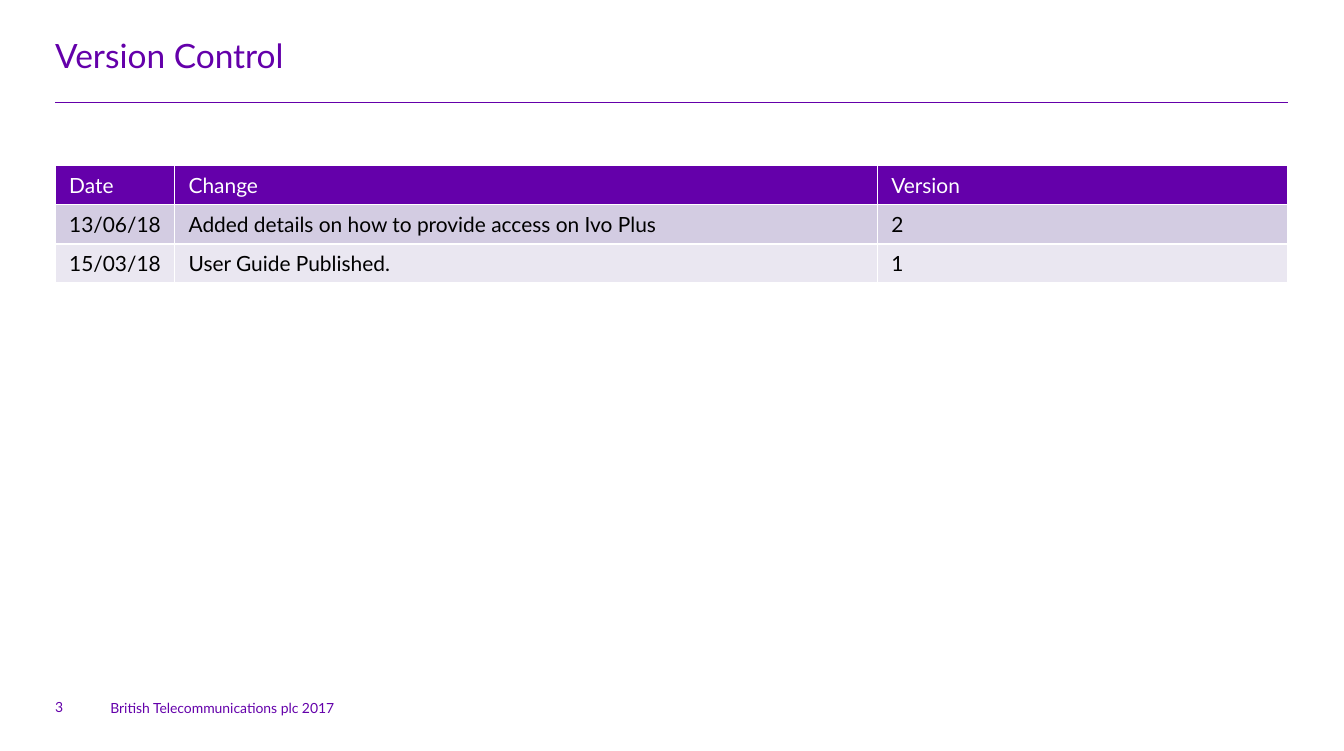
from lxml.etree import SubElement
from pptx import Presentation
from pptx.dml.color import RGBColor
from pptx.enum.shapes import MSO_CONNECTOR
from pptx.enum.text import MSO_ANCHOR
from pptx.oxml.ns import qn
from pptx.util import Inches, Pt

# Content
TITLE = "Version Control"
FOOTER = "British Telecommunications plc 2017"
PAGE_NUMBER = "3"
VERSIONS = [
    ("Date", "Change", "Version"),
    ("13/06/18", "Added details on how to provide access on Ivo Plus", "2"),
    ("15/03/18", "User Guide Published.", "1"),
]

# Format
FONT = "Lato"
PURPLE = RGBColor(0x64, 0x00, 0xAA)
LILAC = RGBColor(0xD3, 0xCC, 0xE2)
PALE_LILAC = RGBColor(0xEA, 0xE7, 0xF1)
WHITE = RGBColor(0xFF, 0xFF, 0xFF)
BLACK = RGBColor(0x00, 0x00, 0x00)
ROW_STYLES = [(PURPLE, WHITE), (LILAC, BLACK), (PALE_LILAC, BLACK)]

# Layout in inches; the narrow right margin keeps each date on one line
LEFT, WIDTH = 0.55, 12.28
COLUMN_WIDTHS = [1.19, 7, 4.09]
ROW_HEIGHT = 0.38
CELL_MARGINS = {
    "margin_left": Inches(0.14), "margin_right": Inches(0.05),
    "margin_top": Inches(0.07), "margin_bottom": Inches(0.07),
}
TEXT_BOXES = [
    (TITLE, (LEFT, 0.35, WIDTH, 0.47), 24, MSO_ANCHOR.TOP),
    (PAGE_NUMBER, (LEFT, 6.81, 0.39, 0.31), 10, MSO_ANCHOR.BOTTOM),
    (FOOTER, (1.1, 6.84, 2.36, 0.29), 10, MSO_ANCHOR.BOTTOM),
]


def set_attributes(target, values):
    for name, value in values.items():
        setattr(target, name, value)


def write(frame, text, size, color):
    span = frame.paragraphs[0].add_run()
    span.text = text
    set_attributes(span.font, {"name": FONT, "size": Pt(size), "bold": False})
    span.font.color.rgb = color


def add_text(page, text, place, size, anchor):
    frame = page.shapes.add_textbox(*map(Inches, place)).text_frame
    set_attributes(frame, {
        "word_wrap": True, "vertical_anchor": anchor, "margin_left": 0,
        "margin_top": 0, "margin_right": 0, "margin_bottom": 0,
    })
    write(frame, text, size, PURPLE)


def add_borders(cell):
    properties = cell._tc.get_or_add_tcPr()
    for side in "LRTB":
        line = SubElement(properties, qn(f"a:ln{side}"), w=str(Pt(1)))
        fill = SubElement(line, qn("a:solidFill"))
        SubElement(fill, qn("a:srgbClr"), val=str(WHITE))


def add_version_table(page):
    table = page.shapes.add_table(
        len(VERSIONS), len(COLUMN_WIDTHS), Inches(LEFT), Inches(1.65),
        Inches(WIDTH), Inches(ROW_HEIGHT * len(VERSIONS))).table
    for column, width in zip(table.columns, COLUMN_WIDTHS):
        column.width = Inches(width)
    for row, texts, colors in zip(table.rows, VERSIONS, ROW_STYLES):
        row.height = Inches(ROW_HEIGHT)
        fill_color, text_color = colors
        for cell, text in zip(row.cells, texts):
            set_attributes(cell, CELL_MARGINS)
            add_borders(cell)
            cell.fill.solid()
            cell.fill.fore_color.rgb = fill_color
            write(cell.text_frame, text, 15, text_color)


def main():
    deck = Presentation()
    set_attributes(deck, {"slide_width": Inches(13.39),
                          "slide_height": Inches(7.48)})
    page = deck.slides.add_slide(deck.slide_layouts[6])

    # Rule under the title
    rule = page.shapes.add_connector(
        MSO_CONNECTOR.STRAIGHT, Inches(LEFT), Inches(1.02),
        Inches(LEFT + WIDTH), Inches(1.02))
    rule.line.width = Pt(0.25)
    rule.line.color.rgb = PURPLE
    SubElement(rule._element.spPr, qn("a:effectLst"))

    # Title, page number and footer
    for text_box in TEXT_BOXES:
        add_text(page, *text_box)

    # Version history
    add_version_table(page)
    deck.save("out.pptx")


if __name__ == "__main__":
    main()
